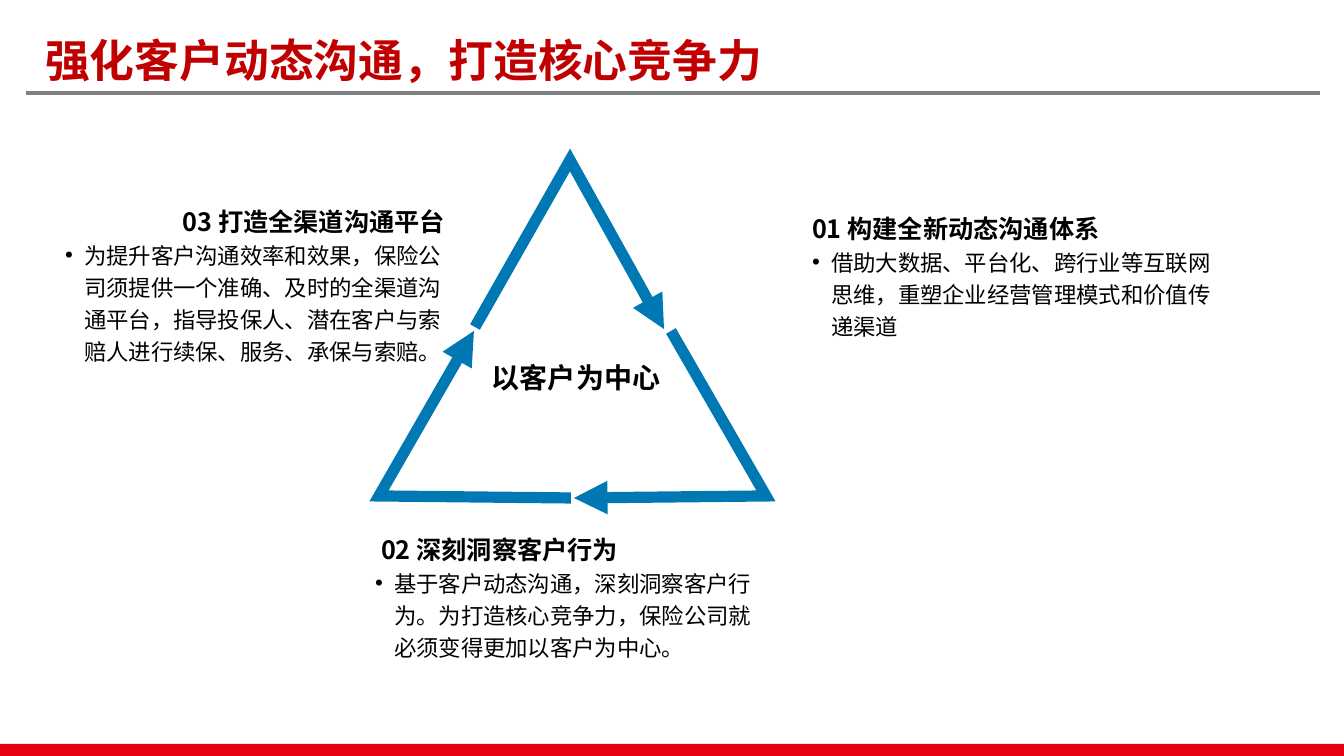
import pptx
import pptx.dml.color
import pptx.enum.shapes
import pptx.enum.text
import pptx.oxml.ns
import pptx.util
from lxml import etree

RED = pptx.dml.color.RGBColor(0xE6, 0x00, 0x12)
TITLE_RED = pptx.dml.color.RGBColor(0xC0, 0x00, 0x00)
BLUE = pptx.dml.color.RGBColor(0x00, 0x78, 0xB4)
GREY = pptx.dml.color.RGBColor(0x80, 0x80, 0x80)
BLACK = pptx.dml.color.RGBColor(0x00, 0x00, 0x00)

ALIGN = pptx.enum.text.PP_ALIGN
ANCHOR = pptx.enum.text.MSO_ANCHOR
PX = 914400 / 100.8
COMPARISON_LAYOUT = 4


def emu(px):
    return pptx.util.Emu(round(px * PX))


def add_xml(parent, tag, **attributes):
    return etree.SubElement(parent, pptx.oxml.ns.qn(tag), attributes)


def write(paragraph, text, *, font, size, color=BLACK, bold=False,
          align=ALIGN.LEFT, spacing=1.0, margin=0, bullet=None):
    """Fill one paragraph; margin is the left indent in px."""
    properties = paragraph._p.get_or_add_pPr()
    properties.set("marL", str(emu(margin)))
    properties.set("indent", str(emu(-margin if bullet else 0)))
    if bullet:
        add_xml(properties, "a:buFont", typeface="Arial")
        add_xml(properties, "a:buChar", char=bullet)
    else:
        add_xml(properties, "a:buNone")
    paragraph.alignment = align
    paragraph.line_spacing = spacing
    paragraph.space_before = paragraph.space_after = pptx.util.Pt(0)
    run = paragraph.add_run()
    run.text = text
    run.font.size = pptx.util.Pt(size)
    run.font.bold = bold
    run.font.color.rgb = color
    run.font.name = font
    add_xml(run._r.get_or_add_rPr(), "a:ea", typeface=font)


class Deck:
    font = "Noto Sans CJK SC"

    def __init__(self):
        self.presentation = pptx.Presentation()
        self.presentation.slide_width = emu(1344)
        self.presentation.slide_height = emu(756)
        layout = self.presentation.slide_layouts[COMPARISON_LAYOUT]
        self.slide = self.presentation.slides.add_slide(layout)
        self.shapes = self.slide.shapes
        self.free_bodies = list(self.slide.placeholders)[1:]

    def frame(self, holder, box, anchor=ANCHOR.TOP):
        holder.left, holder.top, holder.width, holder.height = map(emu, box)
        frame = holder.text_frame
        frame.word_wrap = True
        frame.auto_size = pptx.enum.text.MSO_AUTO_SIZE.NONE
        frame.vertical_anchor = anchor
        return frame

    def title(self, text, box):
        frame = self.frame(self.shapes.title, box, ANCHOR.MIDDLE)
        write(frame.paragraphs[0], text, font=self.font, size=32,
              color=TITLE_RED, bold=True)

    def point(self, heading, detail, box, align=ALIGN.LEFT, margin=0):
        frame = self.frame(self.free_bodies.pop(0), box)
        write(frame.paragraphs[0], heading, font=self.font, size=18, bold=True,
              align=align, spacing=1.5, margin=margin)
        write(frame.add_paragraph(), detail, font=self.font, size=16,
              spacing=1.2, margin=19, bullet="•")

    def label(self, text, box):
        frame = self.frame(self.shapes.add_textbox(0, 0, 0, 0), box)
        write(frame.paragraphs[0], text, font=self.font, size=20, bold=True)

    def band(self, box, color):
        band = self.shapes.add_shape(
            pptx.enum.shapes.MSO_SHAPE.RECTANGLE, *map(emu, box))
        band.shadow.inherit = False
        band.fill.solid()
        band.fill.fore_color.rgb = color
        band.line.fill.background()

    def rule(self, start, end, color, width):
        rule = self.shapes.add_connector(
            pptx.enum.shapes.MSO_CONNECTOR.STRAIGHT, *map(emu, start + end))
        rule.line.color.rgb = color
        rule.line.width = pptx.util.Pt(width)
        add_xml(rule.element.spPr, "a:effectLst")

    def bent_arrow(self, start, corner, tip):
        builder = self.shapes.build_freeform(*start, scale=PX)
        builder.add_line_segments([corner, tip], close=False)
        arrow = builder.convert_to_shape()
        arrow.shadow.inherit = False
        arrow.fill.background()
        arrow.line.color.rgb = BLUE
        arrow.line.width = pptx.util.Pt(8)
        line = arrow.line._get_or_add_ln()
        add_xml(line, "a:miter", lim="800000")
        add_xml(line, "a:tailEnd", type="triangle")

    def save(self):
        for body in self.free_bodies:
            body.element.getparent().remove(body.element)
        self.presentation.save("out.pptx")


def main():
    deck = Deck()

    # Title, rule and footer band
    deck.title("强化客户动态沟通，打造核心竞争力", (35, 27, 747, 65))
    deck.rule((26, 93), (1320, 93), GREY, 2.25)
    deck.band((0, 744, 1344, 12), RED)

    # Triangle cycle, clockwise from the top corner
    deck.bent_arrow((475, 327), (570, 160), (664, 329))
    deck.bent_arrow((671, 331), (766, 496), (574, 498))
    deck.bent_arrow((571, 498), (379, 496), (474, 331))
    deck.label("以客户为中心", (482, 356, 219, 45))

    # Three points around the triangle
    deck.point("01 构建全新动态沟通体系",
               "借助大数据、平台化、跨行业等互联网思维，重塑企业经营管理模式和价值传递渠道",
               (802, 193, 427, 183))
    deck.point("02 深刻洞察客户行为",
               "基于客户动态沟通，深刻洞察客户行为。为打造核心竞争力，"
               "保险公司就必须变得更加以客户为中心。",
               (365, 514, 405, 158), margin=6)
    deck.point("03 打造全渠道沟通平台",
               "为提升客户沟通效率和效果，保险公司须提供一个准确、及时的全渠道沟通平台，"
               "指导投保人、潜在客户与索赔人进行续保、服务、承保与索赔。",
               (55, 186, 400, 186), align=ALIGN.RIGHT)

    deck.save()


if __name__ == "__main__":
    main()
